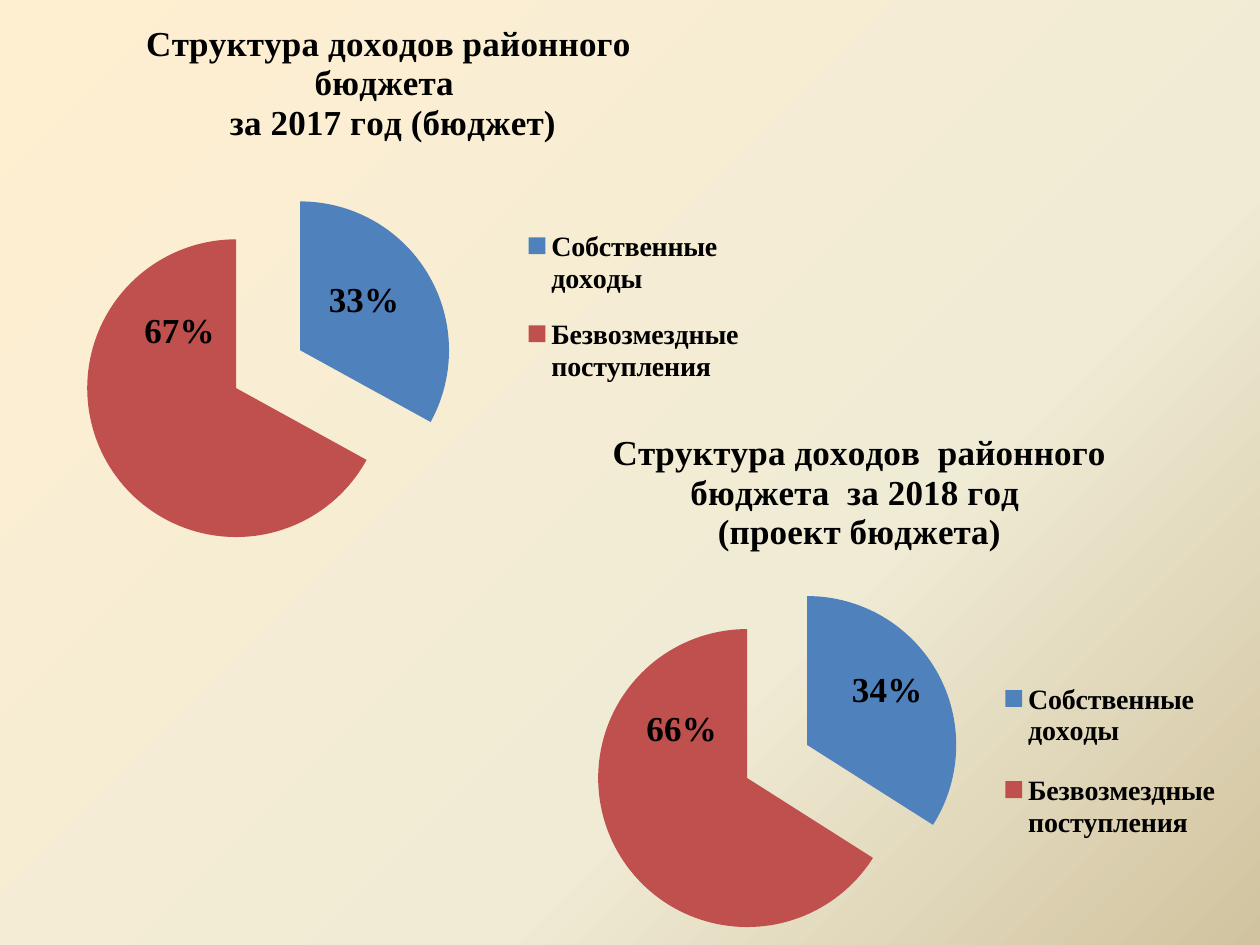
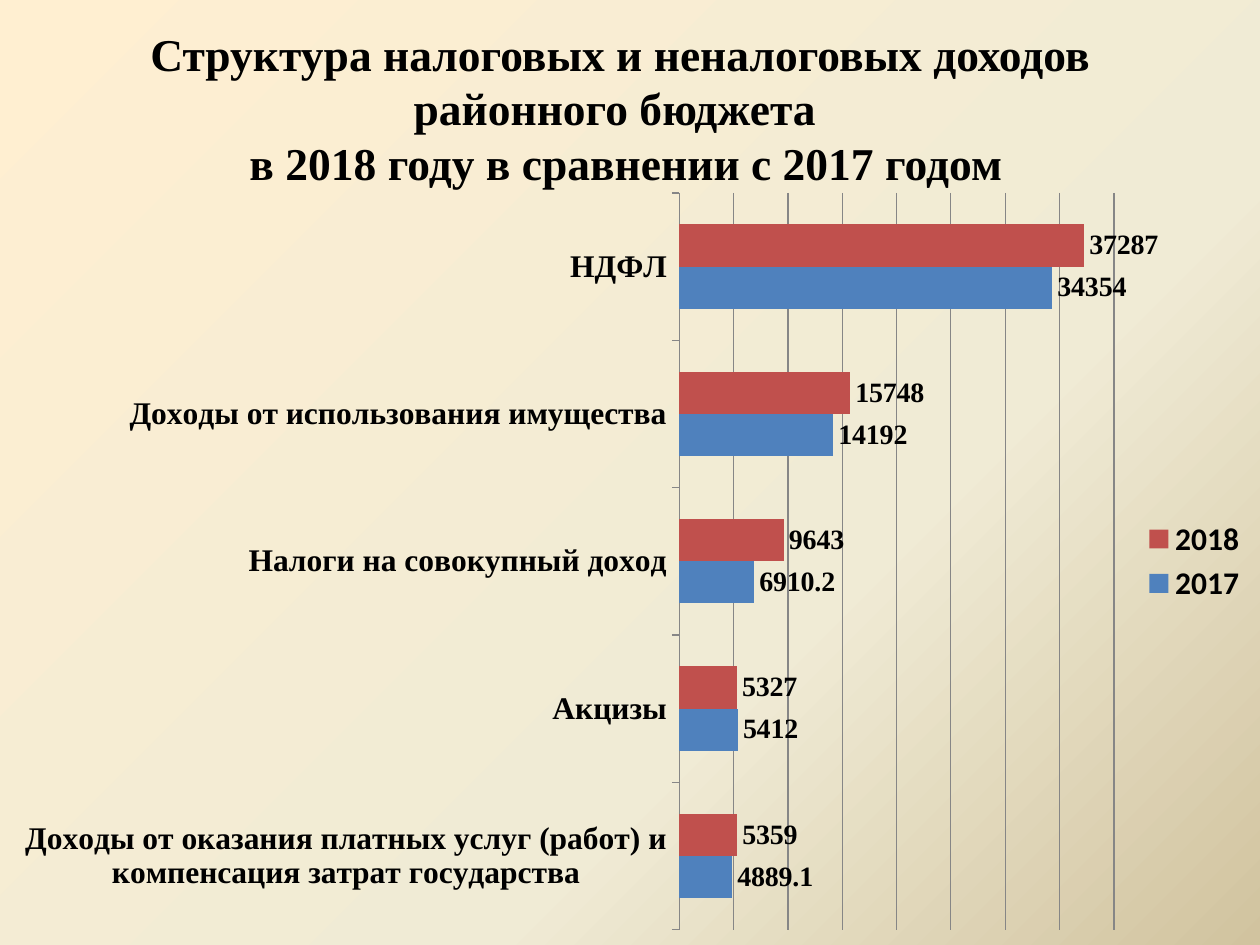
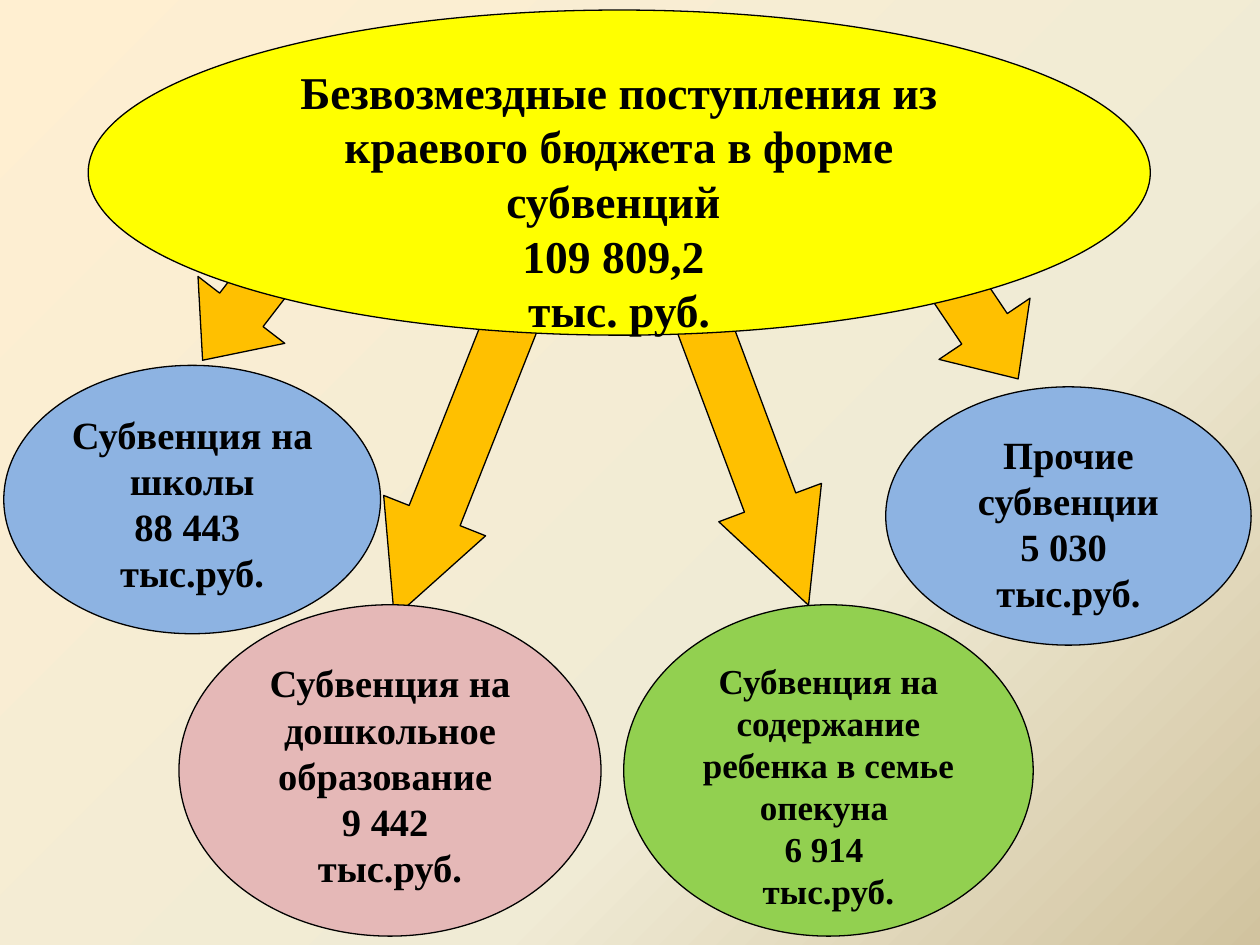
from copy import deepcopy

from pptx import Presentation
from pptx.chart.data import CategoryChartData
from pptx.dml.color import RGBColor
from pptx.enum.chart import XL_CHART_TYPE, XL_LABEL_POSITION, XL_LEGEND_POSITION, XL_TICK_MARK
from pptx.enum.shapes import MSO_SHAPE
from pptx.enum.text import MSO_ANCHOR, PP_ALIGN
from pptx.oxml import parse_xml
from pptx.oxml.ns import nsdecls
from pptx.util import Inches, Pt

BLACK = RGBColor(0x00, 0x00, 0x00)
GREY = RGBColor(0x86, 0x86, 0x86)
BLUE = RGBColor(0x4F, 0x81, 0xBD)
RED = RGBColor(0xC0, 0x50, 0x4D)
SKY = RGBColor(0x8D, 0xB3, 0xE2)
PINK = RGBColor(0xE5, 0xB8, 0xB7)
GREEN = RGBColor(0x92, 0xD0, 0x50)
YELLOW = RGBColor(0xFF, 0xFF, 0x00)
ORANGE = RGBColor(0xFF, 0xC0, 0x00)
BACKGROUND_STOPS = [
    (0, RGBColor(0xFF, 0xEF, 0xD1)),
    (0.65, RGBColor(0xF0, 0xEB, 0xD5)),
    (1, RGBColor(0xD1, 0xC3, 0x9F)),
]
SERIF = "Times New Roman"
SANS = "Calibri"
TITLE_ONLY, BLANK = 5, 6


def format_font(font, size, name=SERIF, bold=True):
    font.size = Pt(size)
    font.name = name
    font.bold = bold
    font.color.rgb = BLACK


def write_text(text_frame, paragraphs, size, name=SERIF, bold=True, align=PP_ALIGN.CENTER):
    for index, text in enumerate(paragraphs):
        paragraph = text_frame.add_paragraph() if index else text_frame.paragraphs[0]
        paragraph.text = text
        paragraph.alignment = align
        for run in paragraph.runs:
            format_font(run.font, size, name, bold)


def set_layout(element, position, **values):
    for layout in element.xpath("c:layout"):
        element.remove(layout)
    settings = "".join(f'<c:{key} val="{value}"/>' for key, value in values.items())
    element.insert(position, parse_xml(
        f'<c:layout {nsdecls("c")}><c:manualLayout>{settings}</c:manualLayout></c:layout>'))


class Deck:
    def __init__(self):
        self.presentation = Presentation()
        self.presentation.slide_width = Inches(10)
        self.presentation.slide_height = Inches(7.5)
        self.slide = None
        self.set_background()

    def set_background(self):
        master = self.presentation.slide_master
        fill = master.background.fill
        fill.gradient()
        fill.gradient_angle = 315
        stop_list = master.element.xpath(".//p:bg//a:gsLst")[0]
        stop_list.append(deepcopy(stop_list[0]))
        for stop, (position, color) in zip(fill.gradient_stops, BACKGROUND_STOPS):
            stop.position = position
            stop.color.rgb = color

    def add_slide(self, layout=BLANK):
        self.slide = self.presentation.slides.add_slide(self.presentation.slide_layouts[layout])

    def title(self, text, left, top, width, height):
        title = self.slide.shapes.title
        title.left, title.top = Inches(left), Inches(top)
        title.width, title.height = Inches(width), Inches(height)
        title.text_frame.vertical_anchor = MSO_ANCHOR.MIDDLE
        write_text(title.text_frame, [text], size=26)

    def shape(self, kind, box, fill, paragraphs=(), size=22, rotation=0, adjustments=()):
        shape = self.slide.shapes.add_shape(kind, *map(Inches, box))
        shape.shadow.inherit = False
        shape.fill.solid()
        shape.fill.fore_color.rgb = fill
        shape.line.color.rgb = BLACK
        shape.line.width = Pt(0.75)
        shape.rotation = rotation
        for index, value in enumerate(adjustments):
            shape.adjustments[index] = value
        shape.text_frame.word_wrap = True
        shape.text_frame.vertical_anchor = MSO_ANCHOR.TOP
        write_text(shape.text_frame, paragraphs, size)

    def ellipse(self, box, fill, paragraphs, size=22):
        self.shape(MSO_SHAPE.OVAL, box, fill, paragraphs, size)

    def arrow(self, left, top, height, rotation, head):
        self.shape(MSO_SHAPE.DOWN_ARROW, (left, top, 0.87, height), ORANGE,
                   rotation=rotation, adjustments=(0.5, head))

    def chart(self, kind, box, categories, series, legend_size, legend_font):
        data = CategoryChartData()
        data.categories = categories
        for name, values in series:
            data.add_series(name, values)
        chart = self.slide.shapes.add_chart(kind, *map(Inches, box), data).chart
        format_font(chart.font, 10, SANS, bold=False)
        chart.has_title = False
        chart.has_legend = True
        chart.legend.position = XL_LEGEND_POSITION.RIGHT
        chart.legend.include_in_layout = False
        format_font(chart.legend.font, legend_size, legend_font)
        return chart

    def pie(self, box, title, values, explosion, label_offsets, plot_box, legend_box,
            title_corner=None):
        chart = self.chart(XL_CHART_TYPE.PIE, box,
                           ["Собственные доходы", "Безвозмездные поступления"],
                           [("Series 1", values)], 16, SERIF)
        chart.has_title = True
        chart.chart_title.include_in_layout = False
        write_text(chart.chart_title.text_frame, title, size=20)
        plot = chart.plots[0]
        plot.vary_by_categories = True
        series = plot.series[0]
        labels = series.data_labels
        labels.show_percentage = True
        labels.show_value = False
        format_font(labels.font, 20)
        for index, color in enumerate((BLUE, RED)):
            point = series.points[index]
            point.format.fill.solid()
            point.format.fill.fore_color.rgb = color
            format_font(point.data_label.font, 20)
            point.data_label.position = XL_LABEL_POSITION.CENTER
        for label, (x, y) in zip(chart.element.xpath(".//c:dLbl"), label_offsets):
            set_layout(label, 1, x=x, y=y)
            label.xpath("c:showVal")[0].set("val", "0")
            label.xpath("c:showPercent")[0].set("val", "1")
        chart.element.xpath(".//c:dPt")[0].addprevious(
            parse_xml(f'<c:explosion {nsdecls("c")} val="{explosion}"/>'))
        x, y, width, height = plot_box
        set_layout(chart.element.xpath(".//c:plotArea")[0], 0, layoutTarget="inner",
                   xMode="edge", yMode="edge", x=x, y=y, w=width, h=height)
        x, y, width, height = legend_box
        set_layout(chart.element.xpath(".//c:legend")[0], 1,
                   xMode="edge", yMode="edge", x=x, y=y, w=width, h=height)
        if title_corner:
            x, y = title_corner
            set_layout(chart.element.xpath(".//c:title")[0], 1,
                       xMode="edge", yMode="edge", x=x, y=y)

    def bars(self, box, categories, series):
        chart = self.chart(XL_CHART_TYPE.BAR_CLUSTERED, box, categories, series, 18, SANS)
        plot = chart.plots[0]
        plot.vary_by_categories = False
        plot.gap_width = 150
        for bar_series, color in zip(plot.series, (BLUE, RED)):
            bar_series.format.fill.solid()
            bar_series.format.fill.fore_color.rgb = color
            bar_series.data_labels.show_value = True
            format_font(bar_series.data_labels.font, 16)
        category_axis, value_axis = chart.category_axis, chart.value_axis
        category_axis.major_tick_mark = XL_TICK_MARK.OUTSIDE
        category_axis.format.line.color.rgb = GREY
        format_font(category_axis.tick_labels.font, 18)
        value_axis.visible = False
        value_axis.has_major_gridlines = True
        value_axis.major_gridlines.format.line.color.rgb = GREY


def income_structure(deck):
    deck.add_slide()
    deck.pie((0, 0, 6.17, 4.69),
             ["Структура доходов районного бюджета ", " за 2017 год (бюджет)"],
             (33, 67), 25, [(0, -0.02), (0.01, -0.16)],
             plot_box=(0.1, 0.31, 0.49, 0.63), legend_box=(0.67, 0.35, 0.29, 0.34))
    deck.pie((4.06, 2.73, 5.94, 4.77),
             ["Структура доходов  районного бюджета  за 2018 год ", "(проект бюджета)"],
             (34, 66), 23, [(0.02, -0.03), (0, -0.14)],
             plot_box=(0.09, 0.39, 0.53, 0.61), legend_box=(0.65, 0.52, 0.3, 0.35),
             title_corner=(0.13, 0.14))


def tax_comparison(deck):
    deck.add_slide(TITLE_ONLY)
    deck.title("Структура налоговых и неналоговых доходов \nрайонного бюджета  \n"
               "в 2018 году в сравнении с 2017 годом", 0.47, 0.23, 9, 1.25)
    deck.bars((0, 1.41, 10, 6.09),
              ["Доходы от оказания платных услуг (работ) и компенсация затрат государства",
               "Акцизы", "Налоги на совокупный доход", "Доходы от использования имущества",
               "НДФЛ"],
              [("2017", (4889.1, 5412, 6910.2, 14192, 34354)),
               ("2018", (5359, 5327, 9643, 15748, 37287))])


def subventions(deck):
    deck.add_slide()
    for arrow in [
        (1.82, 0.96, 2.12, 37.6, 0.58),
        (3.37, 1.36, 3.67, 21.6, 1),
        (7.08, 1.15, 2.03, 326.1, 0.55),
        (5.34, 1.25, 3.67, 339.5, 1),
    ]:
        deck.arrow(*arrow)
    for box, fill, purpose, amount, size in [
        ((0.03, 2.9, 2.99, 2.13), SKY, "Субвенция на школы", "88 443 ", 22),
        ((1.42, 4.8, 3.35, 2.63), PINK, "Субвенция на дошкольное образование ", "9 442 ", 22),
        ((4.95, 4.8, 3.25, 2.63), GREEN,
         "Субвенция на содержание ребенка в семье опекуна ", "6 914 ", 20),
        ((7.03, 3.07, 2.9, 2.05), SKY, "Прочие субвенции", "5 030 ", 22),
    ]:
        deck.ellipse(box, fill, [purpose, amount, "тыс.руб."], size)
    deck.ellipse((0.7, 0.08, 8.43, 2.58), YELLOW,
                 ["Безвозмездные поступления из краевого бюджета в форме субвенций ",
                  "109 809,2 ", "тыс. руб."], 26)


def main():
    deck = Deck()
    income_structure(deck)
    tax_comparison(deck)
    subventions(deck)
    deck.presentation.save("out.pptx")


if __name__ == "__main__":
    main()
